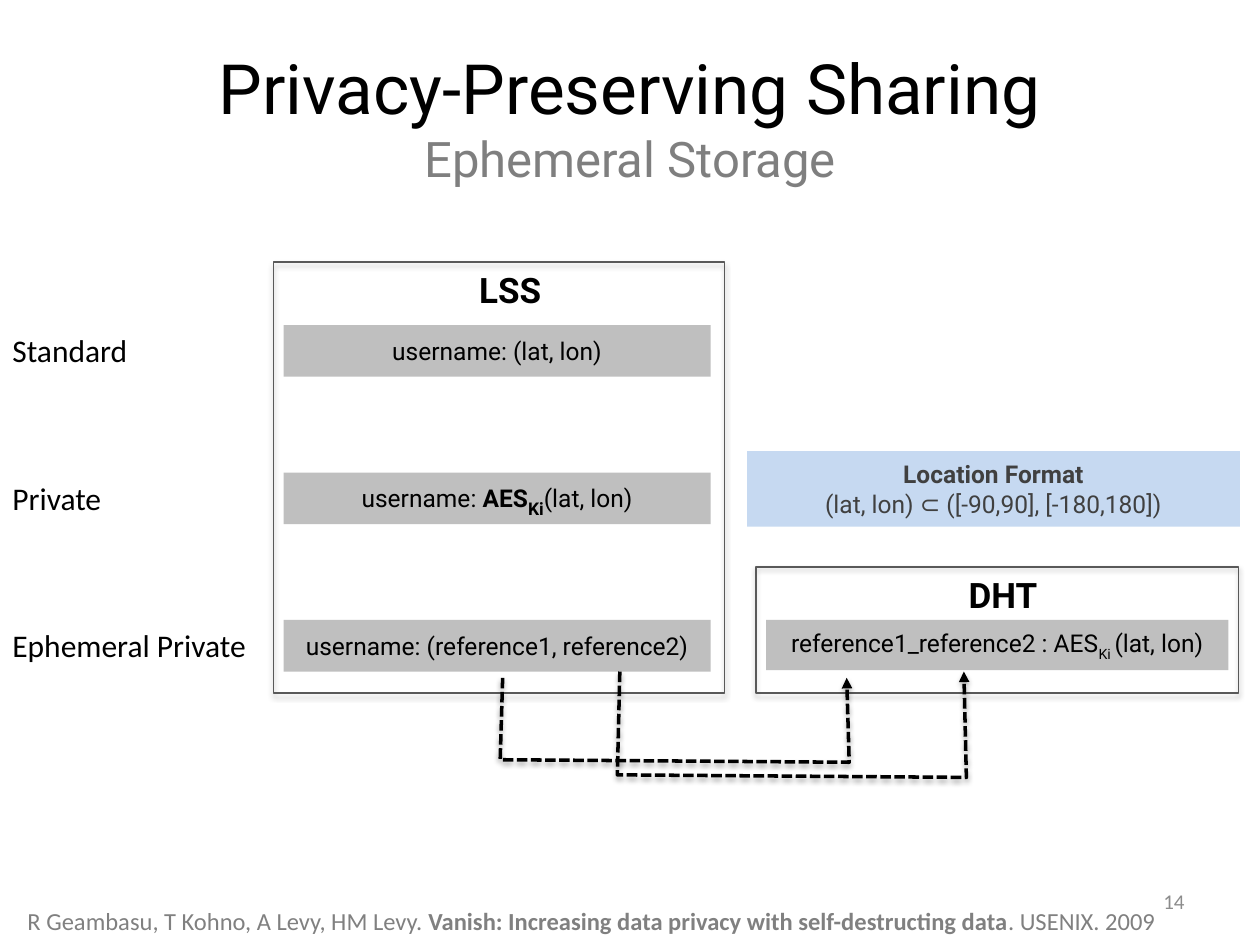
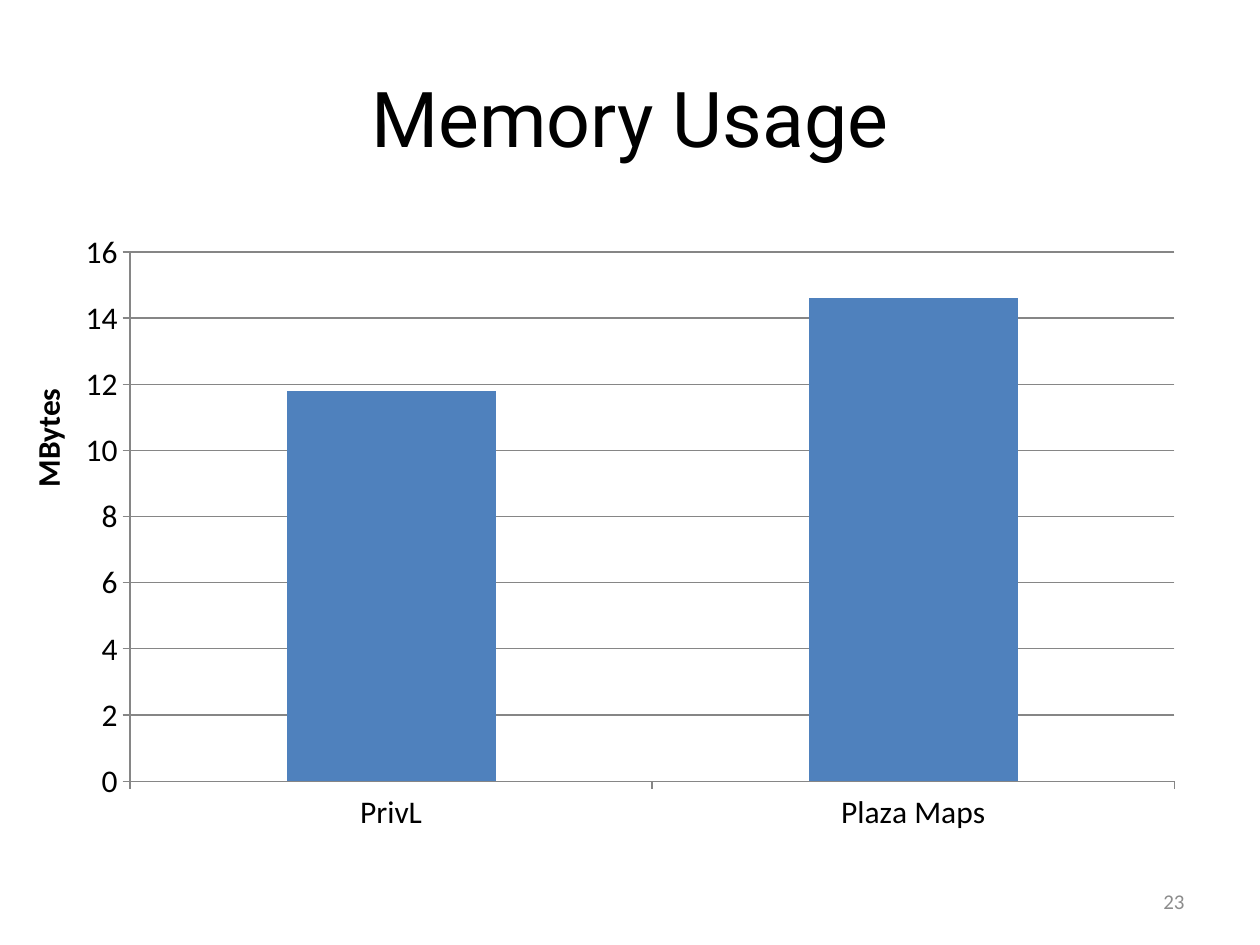
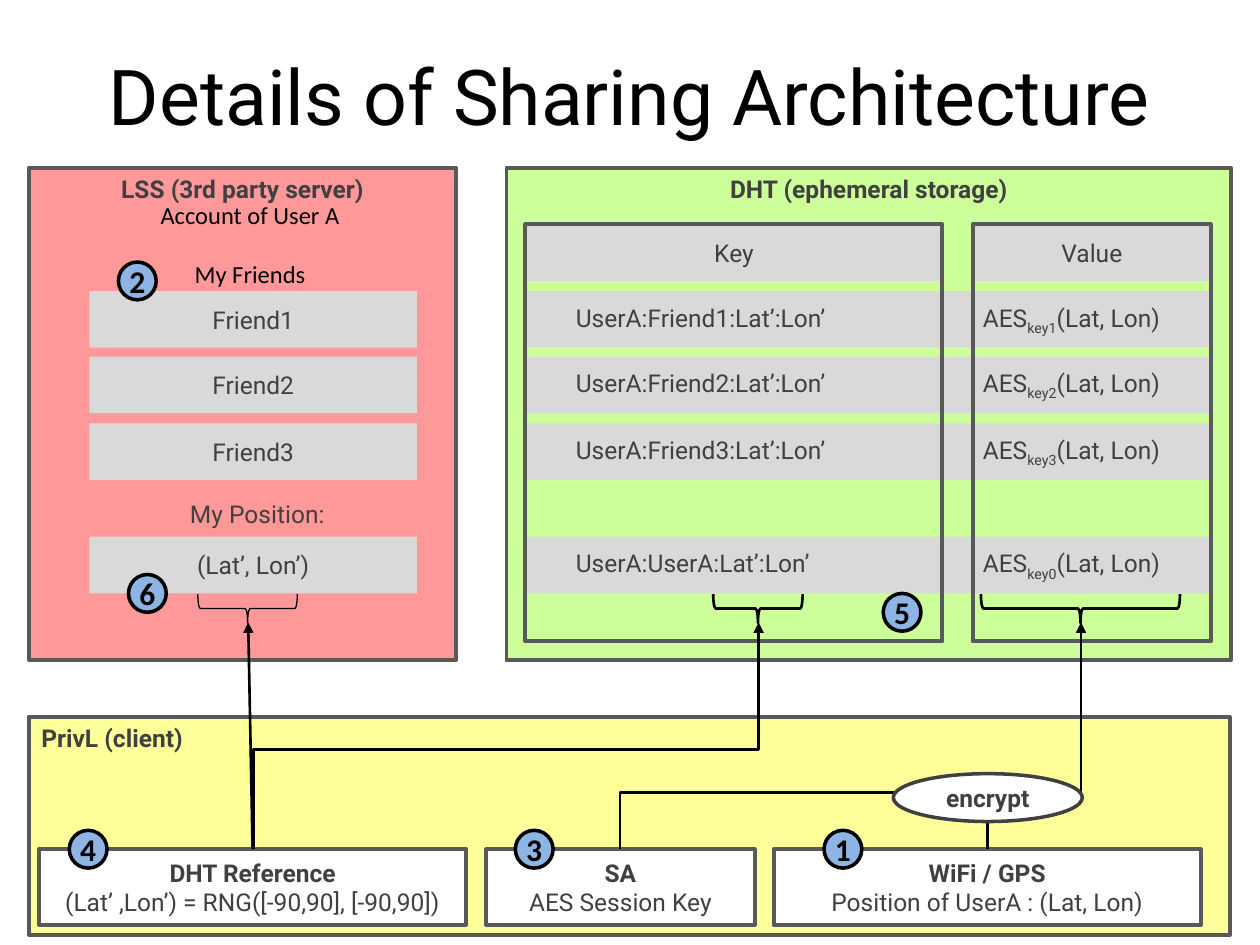
from dataclasses import dataclass, replace

from lxml import etree
from pptx import Presentation
from pptx.chart.data import CategoryChartData
from pptx.dml.color import RGBColor
from pptx.enum.chart import XL_CHART_TYPE as ChartType, XL_TICK_MARK as TickMark
from pptx.enum.dml import MSO_LINE as Dash
from pptx.enum.shapes import MSO_CONNECTOR as Connector, MSO_SHAPE as Shape
from pptx.enum.text import MSO_ANCHOR as Anchor, MSO_AUTO_SIZE as AutoSize, PP_ALIGN as Align
from pptx.oxml.ns import qn
from pptx.util import Inches, Pt


@dataclass(frozen=True)
class TextStyle:
    size: float
    color: str
    font: str
    bold: bool = False
    subscript: bool = False


@dataclass(frozen=True)
class Theme:
    black: str = "000000"
    white: str = "FFFFFF"
    outline: str = "595959"
    charcoal: str = "404040"
    axis: str = "868686"
    bar: str = "4F81BD"
    record: str = "BFBFBF"
    row: str = "D9D9D9"
    note: str = "C6D9F1"
    badge: str = "8EB4E3"
    server: str = "FF9999"
    storage: str = "CCFF99"
    client: str = "FFFF99"
    title: TextStyle = TextStyle(44, "000000", "Roboto")
    long_title: TextStyle = TextStyle(39.6, "000000", "Roboto")
    subtitle: TextStyle = TextStyle(28, "7F7F7F", "Roboto")
    heading: TextStyle = TextStyle(20, "000000", "Roboto", bold=True)
    entry: TextStyle = TextStyle(14, "000000", "Roboto")
    detail: TextStyle = TextStyle(14, "404040", "Roboto")
    strong: TextStyle = TextStyle(14, "404040", "Roboto", bold=True)
    label: TextStyle = TextStyle(18, "000000", "Calibri")
    caption: TextStyle = TextStyle(14, "000000", "Calibri")
    citation: TextStyle = TextStyle(14, "808080", "Calibri")
    number: TextStyle = TextStyle(12, "8C8C8C", "Calibri")


def inches(*lengths):
    return [Inches(length) for length in lengths]


def rgb(color):
    return RGBColor.from_string(color)


def apply_font(font, style):
    font.size, font.name, font.bold = Pt(style.size), style.font, style.bold
    font.color.rgb = rgb(style.color)


def write(frame, paragraphs, style, align=Align.CENTER):
    """Fill a frame; a paragraph is a string or a list of (text, style) spans."""
    for index, content in enumerate(paragraphs):
        spans = [(content, style)] if isinstance(content, str) else content
        para = frame.add_paragraph() if index else frame.paragraphs[0]
        para.text = spans[0][0]
        para.alignment = align
        for text, _ in spans[1:]:
            para.add_run().text = text
        for run, (_, look) in zip(para.runs, spans):
            apply_font(run.font, look)
            if look.subscript:
                run.font._element.set("baseline", "-25000")


def add_arrowhead(shape):
    line = shape.element.spPr.find(qn("a:ln"))
    etree.SubElement(line, qn("a:tailEnd"), type="triangle")


def add_shadow(shape):
    effects = shape.element.spPr.find(qn("a:effectLst"))
    shadow = etree.SubElement(effects, qn("a:outerShdw"), blurRad="40000",
                              dist="23000", dir="5400000", rotWithShape="0")
    color = etree.SubElement(shadow, qn("a:srgbClr"), val="000000")
    etree.SubElement(color, qn("a:alpha"), val="35000")


def add_tab_stop(para, position):
    stops = etree.SubElement(para._p.get_or_add_pPr(), qn("a:tabLst"))
    etree.SubElement(stops, qn("a:tab"), pos=str(Inches(position)), algn="l")


class Page:
    """Holds the theme and the current slide."""

    def __init__(self, deck, theme):
        self.deck, self.theme, self.slide = deck, theme, None

    def start(self, paragraphs, style, top=0.3, number=None):
        self.slide = self.deck.slides.add_slide(self.deck.slide_layouts[5])
        title = self.slide.shapes.title
        title.left, title.top, title.width, title.height = inches(0.5, top, 9, 1.25)
        frame = title.text_frame
        frame.auto_size, frame.vertical_anchor = AutoSize.NONE, Anchor.MIDDLE
        write(frame, paragraphs, style)
        if number:
            box = self.text((7.17, 6.95, 2.33, 0.4), [number], self.theme.number, Align.RIGHT)
            box.text_frame.vertical_anchor = Anchor.MIDDLE

    def text(self, place, paragraphs, style, align=Align.LEFT, wrap=True):
        box = self.slide.shapes.add_textbox(*inches(*place))
        box.text_frame.word_wrap = wrap
        write(box.text_frame, paragraphs, style, align)
        return box

    def paint(self, shape, fill=None, line=None, weight=2.25):
        shape.shadow.inherit = False
        if fill:
            shape.fill.solid()
            shape.fill.fore_color.rgb = rgb(fill)
        else:
            shape.fill.background()
        if line:
            shape.line.color.rgb = rgb(line)
            shape.line.width = Pt(weight)
        else:
            shape.line.fill.background()

    def box(self, place, fill=None, paragraphs=(), style=None, line=None, weight=2.25,
            kind=Shape.RECTANGLE, anchor=Anchor.MIDDLE, align=Align.CENTER):
        shape = self.slide.shapes.add_shape(kind, *inches(*place))
        self.paint(shape, fill, line, weight)
        shape.text_frame.vertical_anchor = anchor
        write(shape.text_frame, paragraphs, style, align)
        return shape

    def panel(self, place, fill, heading, align=Align.CENTER):
        self.box(place, fill, [heading], self.theme.strong, self.theme.outline,
                 anchor=Anchor.TOP, align=align)

    def container(self, place):
        add_shadow(self.box(place, line=self.theme.outline, weight=0.75))

    def source(self, left, width, heading, detail):
        theme = self.theme
        return self.box((left, 6.74, width, 0.6), theme.white,
                        [heading, [(detail, theme.detail)]], theme.strong, theme.outline)

    def badge(self, left, top, digit):
        theme = self.theme
        shape = self.box((left, top, 0.3, 0.3), theme.badge, [digit],
                         replace(theme.label, bold=True), theme.black, 2, Shape.OVAL)
        shape.text_frame.margin_left = shape.text_frame.margin_right = 0

    def brace(self, center, span, weight=1.5):
        """Draw a brace pointing down, below a row."""
        shape = self.box((center - 0.12, 4.83 - span / 2, 0.23, span), line=self.theme.black,
                         weight=weight, kind=Shape.RIGHT_BRACE)
        shape.rotation = 90

    def dashed_arrow(self, points):
        first, *others = [inches(*point) for point in points]
        builder = self.slide.shapes.build_freeform(*first)
        builder.add_line_segments(others, close=False)
        arrow = builder.convert_to_shape()
        self.paint(arrow, line=self.theme.black, weight=2)
        arrow.line.dash_style = Dash.SQUARE_DOT
        add_arrowhead(arrow)
        add_shadow(arrow)

    def connector(self, kind, begin, end, arrow=True):
        line = self.slide.shapes.add_connector(kind, *inches(*begin, *end))
        line.line.color.rgb = rgb(self.theme.black)
        line.line.width = Pt(1.5)
        etree.SubElement(line.element.spPr, qn("a:effectLst"))
        if arrow:
            add_arrowhead(line)
        return line

    def rising_elbow(self, begin, end, turn=None):
        """Go up, then right; with a turn (share of the height), up again to an arrowhead."""
        line = self.connector(Connector.ELBOW, begin, end, arrow=turn is not None)
        run, rise = end[0] - begin[0], begin[1] - end[1]
        middle_x, middle_y = (begin[0] + end[0]) / 2, (begin[1] + end[1]) / 2
        line.left, line.top, line.width, line.height = inches(
            middle_x - rise / 2, middle_y - run / 2, rise, run)
        frame = line.element.spPr.find(qn("a:xfrm"))
        for name, value in (("rot", "5400000"), ("flipH", "1"), ("flipV", "1")):
            frame.set(name, value)
        geometry = line.element.spPr.find(qn("a:prstGeom"))
        if turn is None:
            geometry.set("prst", "bentConnector2")
        else:
            guides = geometry.find(qn("a:avLst"))
            etree.SubElement(guides, qn("a:gd"), name="adj1", fmla=f"val {round(turn * 100000)}")

    def column_chart(self, place, categories, values, maximum, step):
        theme = self.theme
        data = CategoryChartData()
        data.categories = categories
        data.add_series("Series 1", values)
        chart = self.slide.shapes.add_chart(ChartType.COLUMN_STACKED, *inches(*place), data).chart
        chart.has_title = chart.has_legend = False
        apply_font(chart.font, theme.label)
        plot = chart.plots[0]
        plot.gap_width, plot.overlap, plot.vary_by_categories = 150, 100, False
        fill = plot.series[0].format.fill
        fill.solid()
        fill.fore_color.rgb = rgb(theme.bar)
        scale = chart.value_axis
        scale.minimum_scale, scale.maximum_scale, scale.major_unit = 0, maximum, step
        scale.has_major_gridlines = True
        for axis in (scale, chart.category_axis):
            axis.major_tick_mark = TickMark.OUTSIDE
            axis.format.line.color.rgb = rgb(theme.axis)
        scale.major_gridlines.format.line.color.rgb = rgb(theme.axis)


def build_storage(page):
    theme = page.theme
    entry = theme.entry
    bold = replace(entry, bold=True)
    page.start(["Privacy-Preserving Sharing", [("Ephemeral Storage", theme.subtitle)]],
               theme.long_title, number="14")
    private = [("username: ", entry), ("AES", bold),
               ("Ki", replace(bold, size=17.3, subscript=True)), ("(lat, lon)", entry)]
    records = (("Standard", "username: (lat, lon)"), ("Private", private),
               ("Ephemeral Private", "username: (reference1, reference2)"))
    for index, (label, record) in enumerate(records):
        top = 2.58 + 1.17 * index
        page.box((2.25, top, 3.39, 0.41), theme.record, [record], entry)
        page.text((0, top, 2.2, 0.4), [label], theme.label)
    reference = [("reference1_reference2 : AES", entry),
                 ("Ki ", replace(entry, subscript=True)), ("(lat, lon)", entry)]
    page.box((6.08, 4.92, 3.67, 0.4), theme.record, [reference], entry)
    page.text((0.12, 7.14, 9.3, 0.34), [[
        ("R Geambasu, T Kohno, A Levy, HM Levy. ", theme.citation),
        ("Vanish: Increasing data privacy with self-destructing data",
         replace(theme.citation, bold=True)),
        (". USENIX. 2009", theme.citation)]], theme.citation)
    page.box((5.93, 3.58, 3.91, 0.6), theme.note,
             ["Location Format", [("(lat, lon) ⊂ ([-90,90], [-180,180])", theme.detail)]],
             theme.strong)
    for heading, left, place in (("LSS", 3.67, (2.17, 2.08, 3.58, 3.42)),
                                 ("DHT", 7.58, (6, 4.5, 3.83, 1))):
        page.container(place)
        page.text((left, place[1], 0.76, 0.44), [heading], theme.heading, Align.CENTER, wrap=False)
    for left, top, bottom in ((3.97, 5.38, 6.03), (4.9, 5.33, 6.15)):
        page.dashed_arrow([(left + 0.02, top), (left, bottom),
                           (left + 2.77, bottom + 0.02), (left + 2.75, top)])


def build_memory(page):
    theme = page.theme
    page.start(["Memory Usage"], theme.title, number="23")
    page.column_chart((0.5, 1.75, 9, 4.95), ["PrivL", "Plaza Maps"], [11.8, 14.6], 16, 2)
    unit = page.text((-0.48, 3.04, 2.18, 0.87), ["MBytes"], replace(theme.label, bold=True),
                     Align.CENTER, wrap=False)
    unit.rotation = 270


def build_architecture(page):
    theme = page.theme
    detail = theme.detail
    page.start(["Details of Sharing Architecture"], theme.title, top=0.13)
    page.panel((4.02, 1.33, 5.75, 3.91), theme.storage, "DHT (ephemeral storage)")
    page.panel((0.23, 5.69, 9.53, 1.73), theme.client, "PrivL (client)", Align.LEFT)
    page.panel((0.23, 1.33, 3.39, 3.91), theme.server, "LSS (3rd party server)")

    row_tops = [2.31, 2.83, 3.36, 4.26]
    rows = zip(row_tops, ("Friend1", "Friend2", "Friend3", "UserA"),
               ("key1", "key2", "key3", "key0"))
    for top, person, key in rows:
        spans = [(f"UserA:{person}:Lat’:Lon’\tAES", detail),
                 (key, replace(detail, subscript=True)), ("(Lat, Lon)", detail)]
        row = page.box((4.17, top, 5.44, 0.45), theme.row, [spans], detail, align=Align.LEFT)
        row.text_frame.margin_left = Inches(0.4)
        add_tab_stop(row.text_frame.paragraphs[0], 3.23)
    columns = (("Key", 4.17, 3.31), ("Value", 7.72, 1.89))
    for heading, left, width in columns:
        page.box((left, 1.78, width, 0.45), theme.row, [heading], detail)
        page.box((left, 1.78, width, 3.31), line=theme.outline)

    page.source(6.14, 3.39, "WiFi / GPS", "Position of UserA : (Lat, Lon)")
    reference = page.source(0.31, 3.39, "DHT Reference", "(Lat’ ,Lon’) = RNG([-90,90], [-90,90])")
    page.source(3.86, 2.13, "SA", "AES Session Key")
    page.rising_elbow((7.84, 6.74), (8.58, 4.94), 0.25)
    page.rising_elbow((4.92, 6.74), (7.32, 6.29))
    page.rising_elbow((2.01, 6.74), (6.02, 4.94), 0.44)
    page.brace(6.02, 0.71)
    page.brace(8.58, 1.58)
    page.brace(1.97, 0.79, weight=0.75)
    page.box((7.09, 6.14, 1.5, 0.38), theme.white, ["encrypt"], theme.strong,
             theme.charcoal, 2, Shape.OVAL)

    for top, value in zip(row_tops, ("Friend1", "Friend2", "Friend3", "(Lat’, Lon’)")):
        page.box((0.71, top, 2.6, 0.45), theme.row, [value], detail)
    arrow = page.connector(Connector.STRAIGHT, (2.01, 6.74), (1.97, 4.94))
    arrow.begin_connect(reference, 0)
    for left, top, digit in ((0.55, 6.59, "4"), (6.54, 6.59, "1"), (4.09, 6.59, "3"),
                             (0.94, 2.08, "2"), (7.01, 4.71, "5"), (1.02, 4.56, "6")):
        page.badge(left, top, digit)
    account = page.text((1.17, 1.54, 1.63, 0.81), ["Account of User A", "My Friends"],
                        theme.caption, Align.CENTER)
    account.text_frame.paragraphs[1].space_before = Pt(17)
    page.text((1.41, 3.91, 1.27, 0.34), ["My Position:"], detail, wrap=False)


def main():
    deck = Presentation()
    deck.slide_width, deck.slide_height = inches(10, 7.5)
    page = Page(deck, Theme())
    build_storage(page)
    build_memory(page)
    build_architecture(page)
    deck.save("out.pptx")


if __name__ == "__main__":
    main()
